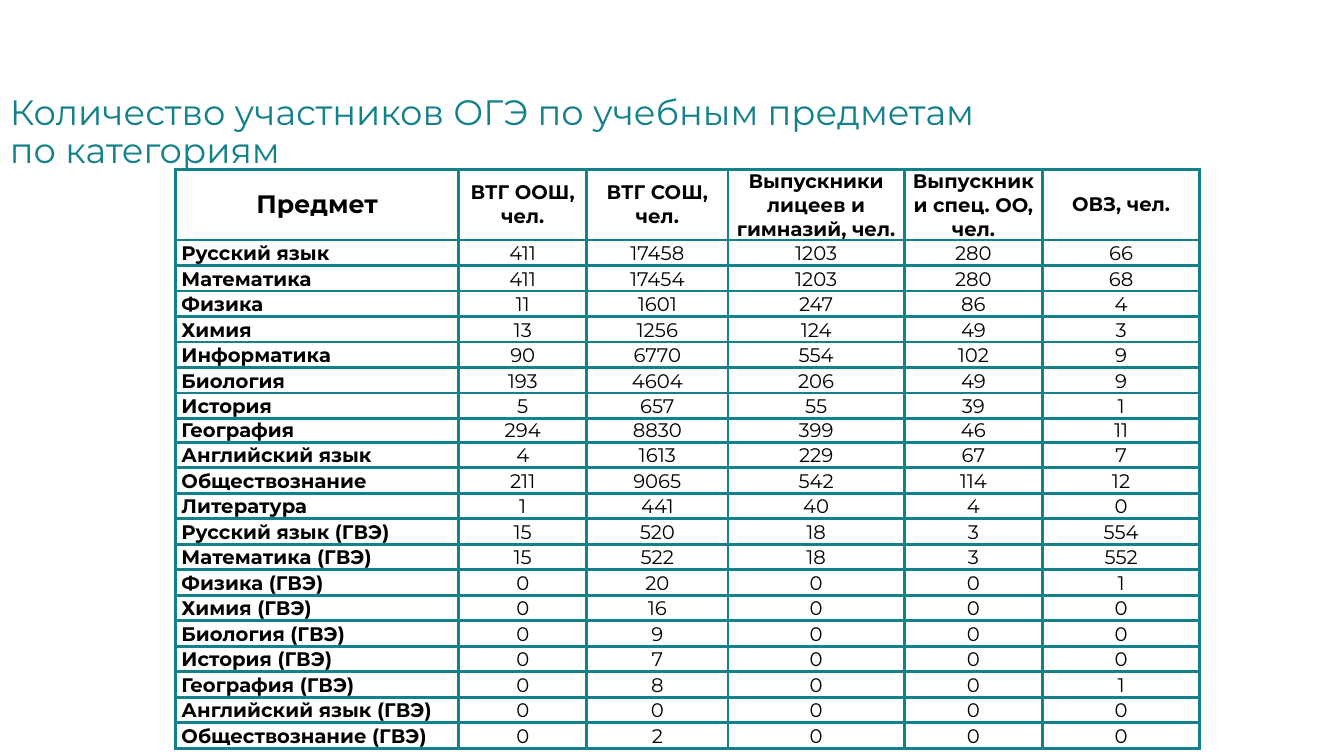
from lxml.etree import SubElement
from pptx import Presentation
from pptx.dml.color import RGBColor
from pptx.enum.text import MSO_ANCHOR, PP_ALIGN
from pptx.oxml.ns import qn
from pptx.util import Inches, Pt

COLORS = {"teal": "138189", "text": "000000"}
FONT = "Montserrat"
HEADERS = ["Предмет", "ВТГ ООШ, чел.", "ВТГ СОШ, чел.",
           "Выпускники лицеев и гимназий, чел.",
           "Выпускники спец. ОО, чел.", "ОВЗ, чел."]
SUBJECTS = [
    ("Русский язык", 411, 17458, 1203, 280, 66),
    ("Математика", 411, 17454, 1203, 280, 68),
    ("Физика", 11, 1601, 247, 86, 4),
    ("Химия", 13, 1256, 124, 49, 3),
    ("Информатика", 90, 6770, 554, 102, 9),
    ("Биология", 193, 4604, 206, 49, 9),
    ("История", 5, 657, 55, 39, 1),
    ("География", 294, 8830, 399, 46, 11),
    ("Английский язык", 4, 1613, 229, 67, 7),
    ("Обществознание", 211, 9065, 542, 114, 12),
    ("Литература", 1, 441, 40, 4, 0),
    ("Русский язык (ГВЭ)", 15, 520, 18, 3, 554),
    ("Математика (ГВЭ)", 15, 522, 18, 3, 552),
    ("Физика (ГВЭ)", 0, 20, 0, 0, 1),
    ("Химия (ГВЭ)", 0, 16, 0, 0, 0),
    ("Биология (ГВЭ)", 0, 9, 0, 0, 0),
    ("История (ГВЭ)", 0, 7, 0, 0, 0),
    ("География (ГВЭ)", 0, 8, 0, 0, 1),
    ("Английский язык (ГВЭ)", 0, 0, 0, 0, 0),
    ("Обществознание (ГВЭ)", 0, 2, 0, 0, 0),
]
COL_WIDTHS = [2.81, 1.27, 1.4, 1.75, 1.37, 1.56]
TABLE_H, HEADER_H, GEOGRAPHY_H = 5.74, 0.7, 0.23
GEOGRAPHY_ROW = 8
ROW_H = (TABLE_H - HEADER_H - GEOGRAPHY_H) / (len(SUBJECTS) - 1)


def add_run(p, text, size, color, bold=False):
    r = p.add_run()
    r.text = text
    r.font.name = FONT
    r.font.size = Pt(size)
    r.font.bold = bold
    r.font.color.rgb = RGBColor.from_string(COLORS[color])


def add_borders(cell):
    tc_pr = cell._tc.get_or_add_tcPr()
    for side in ("lnL", "lnR", "lnT", "lnB"):
        ln = SubElement(tc_pr, qn(f"a:{side}"), w=str(Pt(2.25)))
        fill = SubElement(ln, qn("a:solidFill"))
        SubElement(fill, qn("a:srgbClr"), val=COLORS["teal"])


prs = Presentation()
prs.slide_width, prs.slide_height = Inches(13.33), Inches(7.5)
s = prs.slides.add_slide(prs.slide_layouts[6])

# Title
title = s.shapes.add_textbox(0, Inches(0.89), prs.slide_width, Inches(0.52))
tf = title.text_frame
tf.word_wrap = True
p = tf.paragraphs[0]
p.line_spacing = 0.9
add_run(p, "Количество участников ОГЭ по учебным предметам", 25.2, "teal")
p.add_line_break()
add_run(p, "по категориям", 25.2, "teal")

# Table of participants
table = s.shapes.add_table(len(SUBJECTS) + 1, len(HEADERS), Inches(1.74), Inches(1.68),
                           Inches(sum(COL_WIDTHS)), Inches(TABLE_H)).table
table.first_row = table.horz_banding = False
for column, width in zip(table.columns, COL_WIDTHS):
    column.width = Inches(width)
for row in table.rows:
    row.height = Inches(ROW_H)
table.rows[0].height = Inches(HEADER_H)
table.rows[GEOGRAPHY_ROW].height = Inches(GEOGRAPHY_H)

for i, values in enumerate([HEADERS, *SUBJECTS]):
    for j, value in enumerate(values):
        is_header, is_subject = i == 0, j == 0
        cell = table.cell(i, j)
        add_borders(cell)
        cell.fill.background()
        cell.margin_left = cell.margin_right = Inches(0.06)
        cell.margin_top = cell.margin_bottom = 0
        cell.vertical_anchor = MSO_ANCHOR.MIDDLE if is_header else MSO_ANCHOR.BOTTOM
        p = cell.text_frame.paragraphs[0]
        p.alignment = PP_ALIGN.LEFT if is_subject and not is_header else PP_ALIGN.CENTER
        add_run(p, str(value), 18 if is_header and is_subject else 14, "text",
                bold=is_header or is_subject)
table.cell(0, 4).vertical_anchor = MSO_ANCHOR.TOP
table.cell(len(SUBJECTS), 0).text_frame.paragraphs[0].alignment = PP_ALIGN.JUSTIFY

prs.save("out.pptx")
